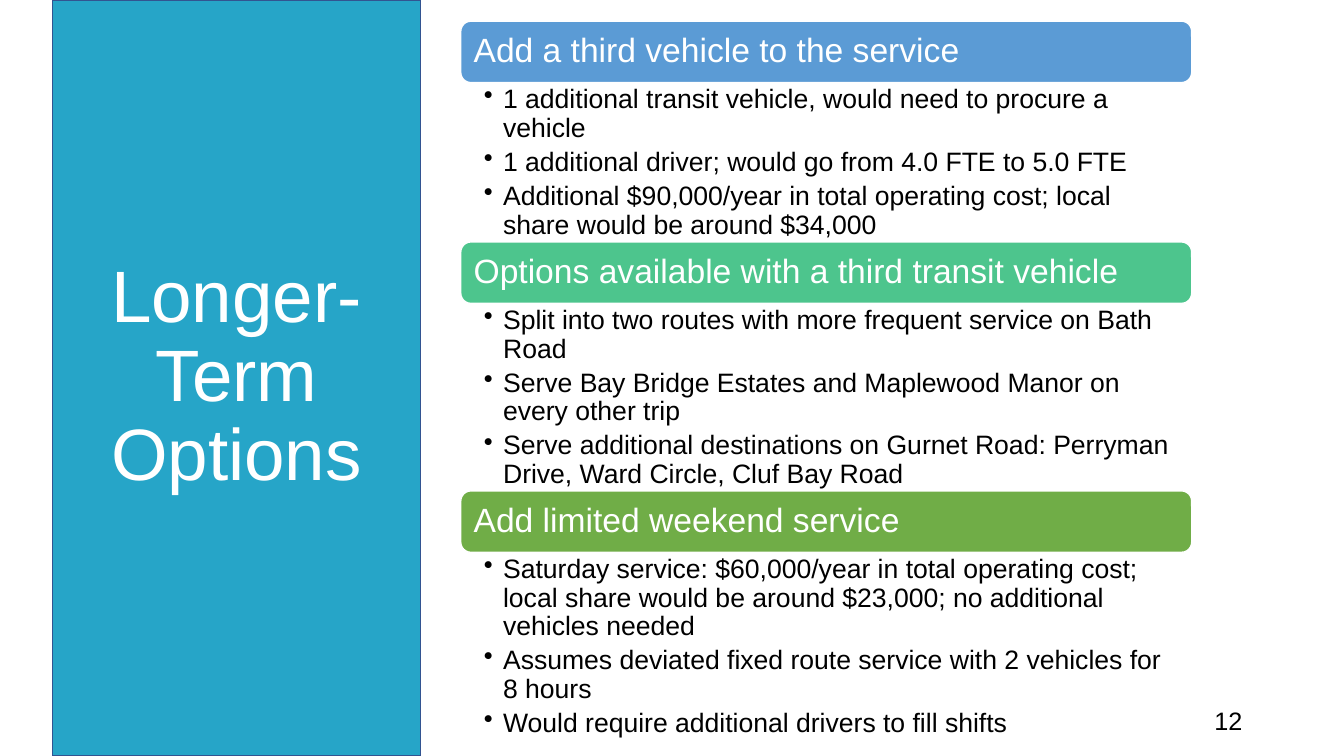
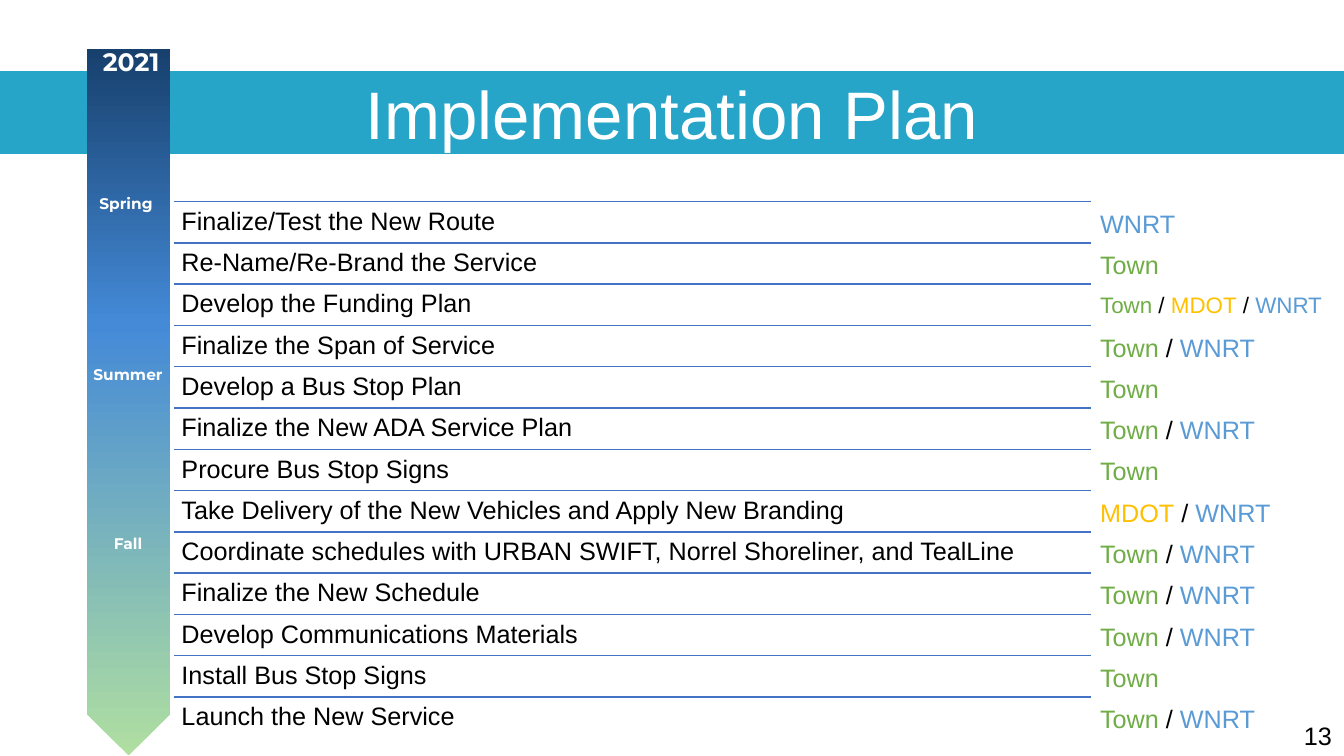
from copy import deepcopy
from pptx import Presentation
from pptx.dml.color import RGBColor
from pptx.enum.shapes import MSO_CONNECTOR, MSO_SHAPE
from pptx.enum.text import MSO_ANCHOR, MSO_AUTO_SIZE, PP_ALIGN
from pptx.oxml.ns import qn
from pptx.util import Inches, Pt

TEAL = RGBColor(0x26, 0xA5, 0xC8)
EDGE = RGBColor(0x32, 0x54, 0x91)
BLUE = RGBColor(0x5B, 0x9B, 0xD5)
MINT = RGBColor(0x4D, 0xC5, 0x8D)
GREEN = RGBColor(0x70, 0xAD, 0x47)
GOLD = RGBColor(0xFF, 0xC0, 0x00)
RULE = RGBColor(0x44, 0x72, 0xC4)
LEAF = RGBColor(0xB0, 0xDF, 0xA1)
SKY = RGBColor(0x44, 0x8A, 0xD7)
NAVY = RGBColor(0x17, 0x40, 0x6D)
WHITE = RGBColor(0xFF, 0xFF, 0xFF)
BLACK = RGBColor(0, 0, 0)

deck = Presentation()
deck.slide_width, deck.slide_height = Inches(13.33), Inches(7.5)


def at(left, top, width, height):
    """Turn percent shares of the slide into lengths."""
    wide, high = deck.slide_width / 100, deck.slide_height / 100
    return int(left * wide), int(top * high), int(width * wide), int(height * high)


def write(par, text, size, color, name="Arial", bold=False):
    run = par.add_run()
    run.text = text
    font = run.font
    font.size, font.name, font.bold = Pt(size), name, bold
    font.color.rgb = color


# Slides with their title bands
heads = [
    ("Longer-Term Options", (3.9, 0, 27.4, 100), 52, EDGE, 0.9),
    ("Implementation Plan", (0, 9.47, 100, 10.8), 48, TEAL, 1.0),
]
slides = []
for text, place, size, edge, space in heads:
    slide = deck.slides.add_slide(deck.slide_layouts[5])
    band = slide.shapes.title
    band.left, band.top, band.width, band.height = at(*place)
    band.fill.solid()
    band.fill.fore_color.rgb = TEAL
    band.line.color.rgb, band.line.width = edge, Pt(1)
    frame = band.text_frame
    frame.auto_size, frame.word_wrap = MSO_AUTO_SIZE.NONE, True
    frame.vertical_anchor = MSO_ANCHOR.MIDDLE
    par = frame.paragraphs[0]
    par.alignment, par.line_spacing = PP_ALIGN.CENTER, space
    write(par, text, size, WHITE)
    slides.append(slide)
goals, plan = slides

# Options: a coloured bar above each bullet list
LEFT, WIDE, BAR = 34.28, 54.39, 8.13
groups = [
    ("Add a third vehicle to the service", BLUE, 21.07, [
        "1 additional transit vehicle, would need to procure a vehicle",
        "1 additional driver; would go from 4.0 FTE to 5.0 FTE",
        "Additional $90,000/year in total operating cost; local share would be around $34,000",
    ]),
    ("Options available with a third transit vehicle", MINT, 24.8, [
        "Split into two routes with more frequent service on Bath Road",
        "Serve Bay Bridge Estates and Maplewood Manor on every other trip",
        "Serve additional destinations on Gurnet Road: Perryman Drive, Ward Circle, Cluf Bay Road",
    ]),
    ("Add limited weekend service", GREEN, 24.8, [
        "Saturday service: $60,000/year in total operating cost; local share would be around "
        "$23,000; no additional vehicles needed",
        "Assumes deviated fixed route service with 2 vehicles for 8 hours",
        "Would require additional drivers to fill shifts",
    ]),
]
top = 2.8
for head, color, high, points in groups:
    bar = goals.shapes.add_shape(MSO_SHAPE.ROUNDED_RECTANGLE, *at(LEFT, top, WIDE, BAR))
    bar.shadow.inherit = False
    bar.fill.solid()
    bar.fill.fore_color.rgb = color
    bar.line.color.rgb, bar.line.width = WHITE, Pt(1)
    frame = bar.text_frame
    frame.word_wrap, frame.vertical_anchor = True, MSO_ANCHOR.MIDDLE
    frame.margin_left = frame.margin_right = Inches(0.1)
    par = frame.paragraphs[0]
    par.alignment, par.line_spacing = PP_ALIGN.LEFT, 0.9
    write(par, head, 24, WHITE)

    frame = goals.shapes.add_textbox(*at(LEFT, top + BAR, WIDE, high)).text_frame
    frame.word_wrap = True
    frame.margin_left, frame.margin_right = Inches(0.23), Inches(0.19)
    frame.margin_top = frame.margin_bottom = Inches(0.03)
    for i, point in enumerate(points):
        par = frame.add_paragraph() if i else frame.paragraphs[0]
        props = par._p.get_or_add_pPr()
        props.set("marL", str(Inches(0.19)))
        props.set("indent", str(-Inches(0.19)))
        mark = props.makeelement(qn("a:buChar"), {"char": "•"})
        props.append(mark)
        par.line_spacing, par.space_after = 0.9, Pt(3.8)
        write(par, point, 19, BLACK)
    top += BAR + high

# Plan: ruled rows of tasks with their owners
hues = {"Town": GREEN, "MDOT": GOLD, "WNRT": BLUE}
spans = {1: 7.3, 2: 14.4, 3: 18.3}
tasks = [
    ("Finalize/Test the New Route", "WNRT"),
    ("Re-Name/Re-Brand the Service", "Town"),
    ("Develop the Funding Plan", "Town / MDOT / WNRT"),
    ("Finalize the Span of Service", "Town / WNRT"),
    ("Develop a Bus Stop Plan", "Town"),
    ("Finalize the New ADA Service Plan", "Town / WNRT"),
    ("Procure Bus Stop Signs", "Town"),
    ("Take Delivery of the New Vehicles and Apply New Branding", "MDOT / WNRT"),
    ("Coordinate schedules with URBAN SWIFT, Norrel Shoreliner, and TealLine", "Town / WNRT"),
    ("Finalize the New Schedule", "Town / WNRT"),
    ("Develop Communications Materials", "Town / WNRT"),
    ("Install Bus Stop Signs", "Town"),
    ("Launch the New Service", "Town / WNRT"),
]
LEFT, WIDE, TOP, ROW = 12.98, 68.19, 26.67, 5.46
for i, (task, team) in enumerate(tasks):
    top = TOP + i * ROW
    x, y, w, h = at(LEFT, top, WIDE, ROW)
    line = plan.shapes.add_connector(MSO_CONNECTOR.STRAIGHT, x, y, x + w, y)
    line.line.color.rgb, line.line.width = RULE, Pt(1)
    props = line._element.spPr
    props.append(props.makeelement(qn("a:effectLst"), {}))

    frame = plan.shapes.add_textbox(x, y, w, h).text_frame
    frame.word_wrap = True
    frame.margin_left = frame.margin_right = Inches(0.07)
    frame.margin_top = frame.margin_bottom = Inches(0.07)
    par = frame.paragraphs[0]
    par.line_spacing = 0.9
    write(par, task, 18, BLACK)

    names = team.split(" / ")
    size = 16 if len(names) > 2 else 18
    place = at(LEFT + WIDE - 0.05, top + 0.2, spans[len(names)], 5.33)
    frame = plan.shapes.add_textbox(*place).text_frame
    frame.word_wrap = True
    par = frame.paragraphs[0]
    for j, name in enumerate(names):
        if j:
            write(par, " / ", size, BLACK)
        write(par, name, size, hues[name])

# Season arrow, turned to point down
arrow = plan.shapes.add_shape(MSO_SHAPE.PENTAGON, *at(-16.73, 47.73, 52.59, 10.93))
arrow.rotation = 90
arrow.shadow.inherit = False
arrow.line.fill.background()
arrow.fill.gradient()
arrow.fill.gradient_angle = 180
stops = arrow._element.spPr.find(qn("a:gradFill")).find(qn("a:gsLst"))
stops.append(deepcopy(stops[-1]))
shades = [(0, LEAF), (0.61, SKY), (1, NAVY)]
for stop, (share, color) in zip(arrow.fill.gradient_stops, shades):
    stop.position, stop.color.rgb = share, color

# Season labels
dates = [("2021", 6.08, 7.2, 18), ("Spring", 5.7, 25.2, 11),
         ("Summer", 5.85, 47.87, 11), ("Fall", 5.85, 70.27, 11)]
for text, left, top, size in dates:
    frame = plan.shapes.add_textbox(*at(left, top, 7.35, 4.5)).text_frame
    frame.word_wrap = True
    par = frame.paragraphs[0]
    par.alignment, par.line_spacing = PP_ALIGN.CENTER, Pt(12)
    write(par, text, size, WHITE, "Montserrat", True)

# Page numbers
for slide, page, left, top in [(goals, "12", 70.67, 92.67), (plan, "13", 77.34, 94.67)]:
    frame = slide.shapes.add_textbox(*at(left, top, 22.5, 5.33)).text_frame
    frame.word_wrap = True
    par = frame.paragraphs[0]
    par.alignment = PP_ALIGN.RIGHT
    write(par, page, 18, BLACK)

deck.save("out.pptx")
